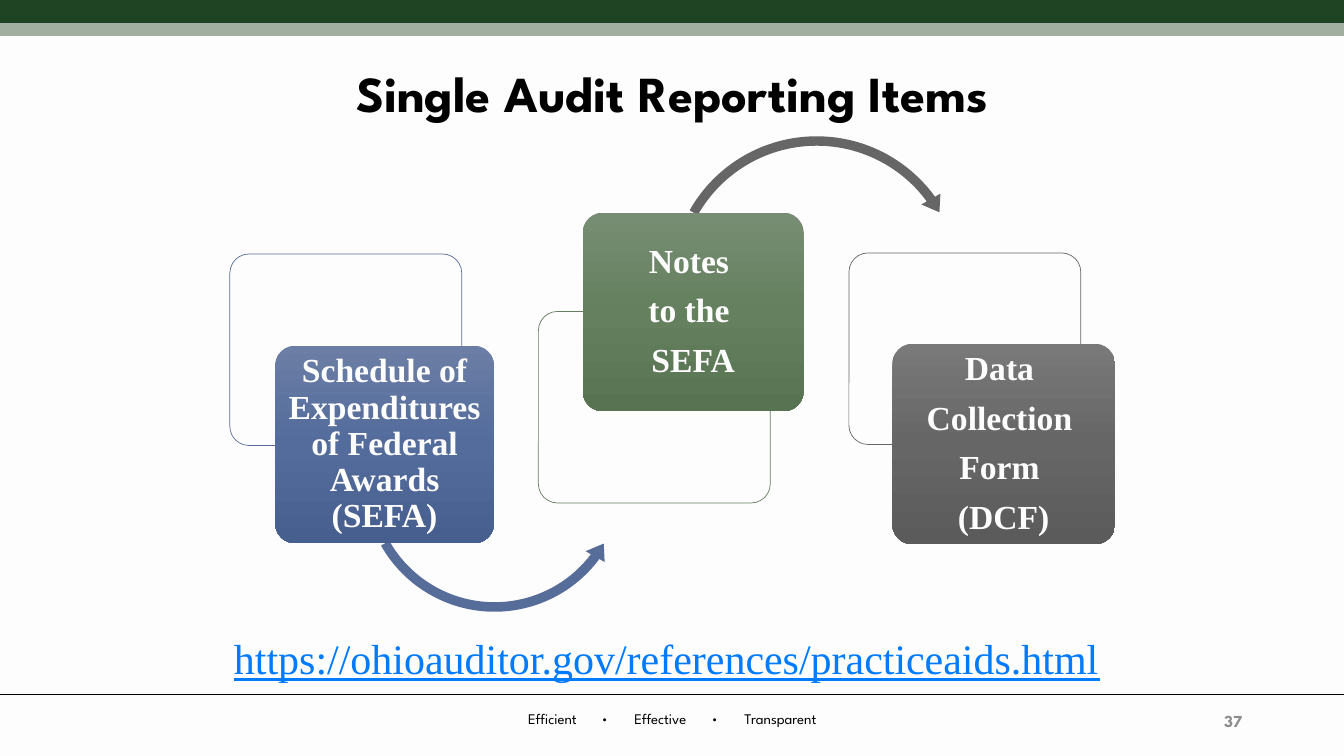
import copy

import pptx
import pptx.dml.color
import pptx.enum.shapes
import pptx.enum.text
import pptx.oxml.ns
import pptx.oxml.xmlchemy
import pptx.util

Inches = pptx.util.Inches
Pt = pptx.util.Pt
SHAPE = pptx.enum.shapes.MSO_SHAPE
ALIGN = pptx.enum.text.PP_ALIGN
ANCHOR = pptx.enum.text.MSO_ANCHOR
qn = pptx.oxml.ns.qn
element = pptx.oxml.xmlchemy.OxmlElement

SERIF, SANS = "Times New Roman", "League Spartan"
COLORS = {
    "paper": "FDFDFD", "black": "000000", "forest": "1F4423", "sage": "A0AFA0",
    "number": "8C8C8C", "link": "007AFF",
    "blue": "566D99", "green": "657E5F", "gray": "666666",
}
SHADES = {
    "blue": ("6C7EA5", "536C9C", "465F8E"),
    "green": ("778D73", "64805E", "587352"),
    "gray": ("797979", "666666", "5B5B5B"),
}
# hue, frame left and top, card box, card lines
STEPS = [
    ("blue", (2.28, 2.52), (2.73, 3.43, 2.17, 1.96),
     ["Schedule of Expenditures of Federal Awards (SEFA)"]),
    ("green", (5.34, 3.09), (5.78, 2.11, 2.19, 1.97),
     ["Notes ", "to the ", "SEFA"]),
    ("gray", (8.42, 2.51), (8.85, 3.41, 2.21, 1.99),
     ["Data ", "Collection ", "Form ", "(DCF)"]),
]
FOOTER = [(5.48, "Efficient"), (6, "•"), (6.55, "Effective"),
          (7.09, "•"), (7.74, "Transparent")]


def rgb(text):
    return pptx.dml.color.RGBColor.from_string(text)


def write(para, text, font, size, color, bold=False, line=False):
    run = para.add_run()
    run.text = text
    run.font.name = font
    run.font.size = Pt(size)
    run.font.color.rgb = rgb(COLORS[color])
    run.font.bold = bold
    run.font.underline = line


def label(slide, box, text, font, size, color, align=ALIGN.CENTER,
          anchor=ANCHOR.MIDDLE, **style):
    frame = slide.shapes.add_textbox(*map(Inches, box)).text_frame
    frame.word_wrap = True
    frame.vertical_anchor = anchor
    para = frame.paragraphs[0]
    para.alignment = align
    write(para, text, font, size, color, **style)
    return frame


def rule(slide, y, color, width):
    line = slide.shapes.add_connector(
        pptx.enum.shapes.MSO_CONNECTOR.STRAIGHT,
        Inches(0), Inches(y), Inches(13.33), Inches(y))
    line.line.color.rgb = rgb(COLORS[color])
    line.line.width = Pt(width)
    line._element.spPr.append(element("a:effectLst"))


def block(slide, kind, box, adjust):
    """Add a preset shape without shadow or outline."""
    shape = slide.shapes.add_shape(kind, *map(Inches, box))
    shape.shadow.inherit = False
    shape.line.fill.background()
    for i, value in enumerate(adjust):
        shape.adjustments[i] = value
    return shape


def outline(slide, left, top, hue):
    shape = block(slide, SHAPE.ROUNDED_RECTANGLE, (left, top, 2.3, 1.9), [0.1])
    shape.fill.solid()
    shape.fill.fore_color.rgb = rgb(COLORS["paper"])
    shape.line.color.rgb = rgb(COLORS[hue])
    shape.line.width = Pt(0.5)


def arrow(slide, kind, box, adjust, hue):
    shape = block(slide, kind, box, adjust)
    shape.fill.solid()
    shape.fill.fore_color.rgb = rgb(COLORS[hue])


def shade(shape, hues):
    """Fill from top to bottom with evenly spaced colours."""
    shape.fill.gradient()
    shape.fill.gradient_angle = 270
    stops = shape._element.spPr.find(".//" + qn("a:gsLst"))
    stops.append(copy.deepcopy(stops[0]))
    for i, (stop, hue) in enumerate(zip(shape.fill.gradient_stops, hues)):
        stop.position = i / (len(hues) - 1)
        stop.color.rgb = rgb(hue)


def card(slide, box, hue, lines):
    shape = block(slide, SHAPE.ROUNDED_RECTANGLE, box, [0.1])
    shade(shape, SHADES[hue])
    frame = shape.text_frame
    frame.word_wrap = True
    frame.vertical_anchor = ANCHOR.MIDDLE
    frame.margin_left = frame.margin_right = Inches(0.05)
    frame.margin_top = frame.margin_bottom = Inches(0.03)
    for i, text in enumerate(lines):
        para = frame.add_paragraph() if i else frame.paragraphs[0]
        para.alignment = ALIGN.CENTER
        para.line_spacing = 0.9
        para.space_after = Pt(9.5)
        write(para, text, SERIF, 24, "paper", bold=True)


def footer(slide):
    """Write the motto, each word centred on its own tab stop."""
    text = "".join("\t" + word for _, word in FOOTER)
    frame = label(slide, (0, 6.99, 13.33, 0.28), text, SANS, 10.5, "black",
                  ALIGN.LEFT, ANCHOR.TOP)
    frame.margin_left = frame.margin_right = 0
    tabs = element("a:tabLst")
    for x, _ in FOOTER:
        tab = element("a:tab")
        tab.set("pos", str(int(Inches(x))))
        tab.set("algn", "ctr")
        tabs.append(tab)
    frame.paragraphs[0]._p.get_or_add_pPr().append(tabs)


def main():
    deck = pptx.Presentation()
    deck.slide_width, deck.slide_height = Inches(13.33), Inches(7.5)
    slide = deck.slides.add_slide(deck.slide_layouts[6])
    slide.background.fill.solid()
    slide.background.fill.fore_color.rgb = rgb(COLORS["paper"])

    rule(slide, 0.1, "forest", 18)
    rule(slide, 0.29, "sage", 9)
    rule(slide, 6.89, "black", 0.5)
    footer(slide)

    title = label(slide, (0.92, 0.4, 11.5, 1.1), "Single Audit Reporting Items",
                  SANS, 36, "black", bold=True)
    title.paragraphs[0].line_spacing = 0.9
    label(slide, (9.42, 6.95, 3, 0.4), "37", SANS, 12, "number",
          ALIGN.RIGHT, bold=True)
    link = label(slide, (1.92, 6.23, 9.49, 0.61),
                 "https://ohioauditor.gov/references/practiceaids.html",
                 SERIF, 30, "link", anchor=ANCHOR.TOP, line=True)
    write(link.paragraphs[0], " ", SERIF, 30, "black")

    for hue, spot, _, _ in STEPS:
        outline(slide, *spot, hue)
    arrow(slide, SHAPE.LEFT_CIRCULAR_ARROW, (3.55, 3.42, 2.71, 2.71),
          [0.035, 4.292, 22.097, 90.295, 0.04], "blue")
    arrow(slide, SHAPE.CIRCULAR_ARROW, (6.59, 1.29, 3.02, 3.02),
          [0.031, 3.826, 194.358, 125.695, 0.036], "gray")
    for hue, _, box, lines in STEPS:
        card(slide, box, hue, lines)

    deck.save("out.pptx")


if __name__ == "__main__":
    main()
